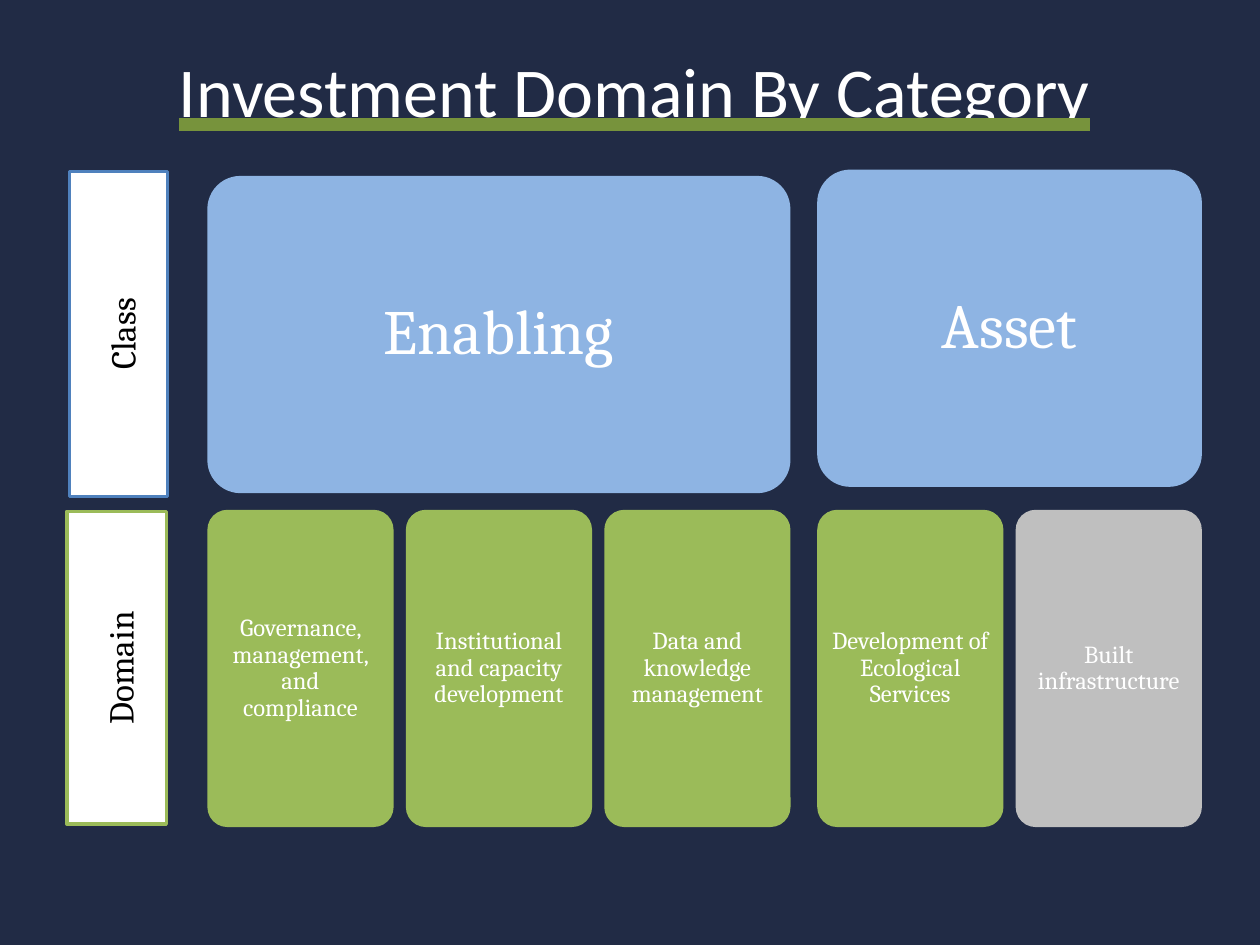
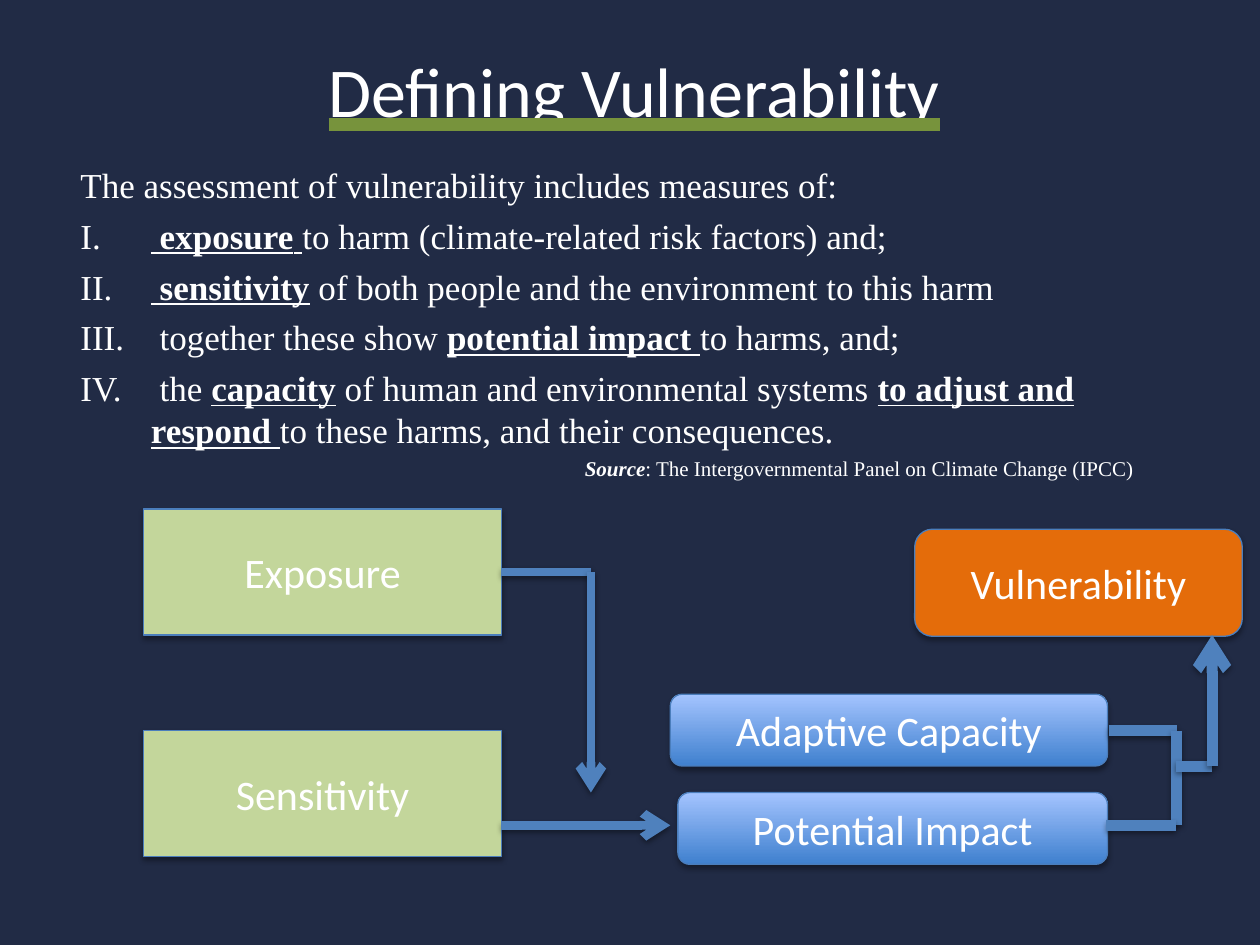
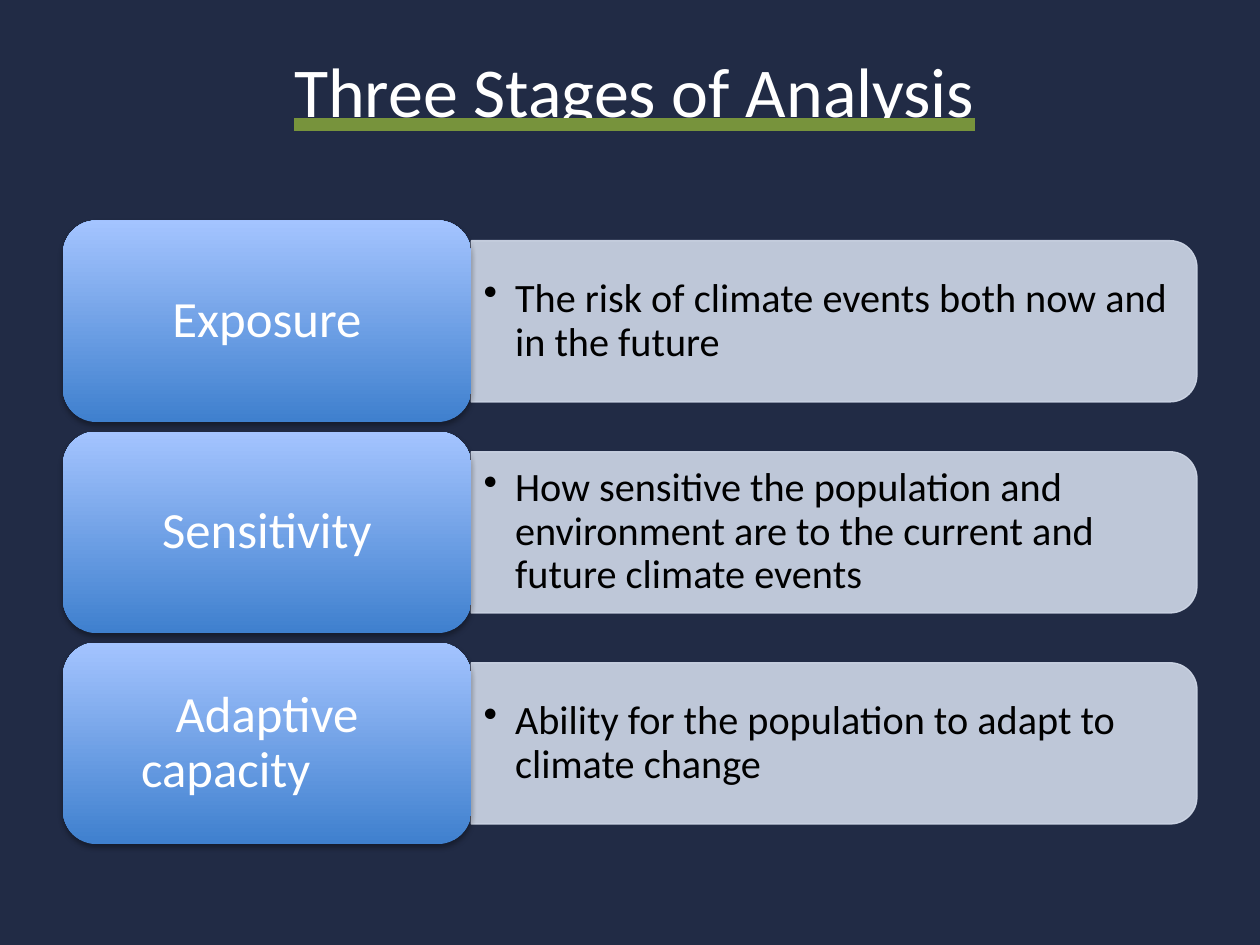
from lxml.etree import SubElement as Sub
from pptx import Presentation
from pptx.dml.color import RGBColor as RGB
from pptx.enum.shapes import MSO_CONNECTOR as Link, MSO_SHAPE as Kind
from pptx.enum.text import (MSO_ANCHOR as Anchor, MSO_AUTO_SIZE as Fit,
                            MSO_UNDERLINE as Under, PP_ALIGN as Align)
from pptx.oxml.ns import qn
from pptx.util import Inches as In, Pt

NAVY = RGB(0x21, 0x2B, 0x45)
WHITE = RGB(0xFF, 0xFF, 0xFF)
BLACK = RGB(0x00, 0x00, 0x00)
OLIVE = RGB(0x77, 0x93, 0x3C)
GREEN = RGB(0x9B, 0xBB, 0x59)
PALE = RGB(0xC3, 0xD6, 0x9B)
SKY = RGB(0x8E, 0xB4, 0xE3)
BLUE = RGB(0x4F, 0x81, 0xBD)
EDGE = RGB(0x4B, 0x7E, 0xBC)
GRAY = RGB(0xBF, 0xBF, 0xBF)
MIST = RGB(0xD0, 0xD8, 0xE8)
ORANGE = RGB(0xE4, 0x6C, 0x0A)
FADE = (RGB(0x3F, 0x80, 0xCE), RGB(0xA4, 0xC4, 0xFF))
SANS, SERIF, ROMAN = "Calibri", "Cambria", "Times New Roman"


def box(slide, kind, place, text, font, size, fill, edge=None, width=0.75,
        pad=(0.1, 0.05), lead=1.0, color=WHITE, round_by=None):
    """Add a labelled shape; a pair of colours as fill fades from bottom to top."""
    shape = slide.shapes.add_shape(kind, *map(In, place))
    shape.shadow.inherit = False
    if round_by:
        shape.adjustments[0] = round_by
    if isinstance(fill, RGB):
        shape.fill.solid()
        shape.fill.fore_color.rgb = fill
    else:
        shape.fill.gradient()
        shape.fill.gradient_angle = 90
        for stop, shade in zip(shape.fill.gradient_stops, fill):
            stop.color.rgb = shade
    if edge is None:
        shape.line.fill.background()
    else:
        shape.line.color.rgb = edge
        shape.line.width = Pt(width)
    frame = shape.text_frame
    frame.word_wrap = True
    frame.vertical_anchor = Anchor.MIDDLE
    frame.margin_left = frame.margin_right = In(pad[0])
    frame.margin_top = frame.margin_bottom = In(pad[1])
    frame.text = text
    para = frame.paragraphs[0]
    para.alignment = Align.CENTER
    para.line_spacing = lead
    para.font.name, para.font.size = font, Pt(size)
    para.font.color.rgb = color
    return shape


def drop(shape, alpha=35, dist=1.8):
    """Give the shape a soft shadow below it."""
    props = shape._element.spPr
    list_tag = qn("a:effectLst")
    effects = props.find(list_tag)
    if effects is None:
        effects = Sub(props, list_tag)
    outer = Sub(effects, qn("a:outerShdw"), blurRad=str(Pt(3.1)),
                dist=str(Pt(dist)), dir="5400000", rotWithShape="0")
    tint = Sub(outer, qn("a:srgbClr"), val="000000")
    Sub(tint, qn("a:alpha"), val=str(alpha * 1000))


deck = Presentation()
deck.slide_width, deck.slide_height = In(10), In(7.5)
ground = deck.slide_master.background.fill
ground.solid()
ground.fore_color.rgb = NAVY

slides = []
for name in ("Investment Domain By Category", "Defining Vulnerability",
             "Three Stages of Analysis"):
    slide = deck.slides.add_slide(deck.slide_layouts[5])
    title = slide.shapes.title
    title.left, title.top, title.width, title.height = map(In, (0.21, 0.21, 9.65, 1))
    title.text_frame.auto_size = Fit.NONE
    title.text_frame.vertical_anchor = Anchor.MIDDLE
    para = title.text_frame.paragraphs[0]
    para.alignment = Align.CENTER
    run = para.add_run()
    run.text = name
    run.font.size = Pt(40)
    run.font.underline = Under.HEAVY_LINE
    run.font.color.rgb = WHITE
    rule = Sub(Sub(run._r.get_or_add_rPr(), qn("a:uFill")), qn("a:solidFill"))
    Sub(rule, qn("a:srgbClr"), val=str(OLIVE))
    run.font.name = SANS
    slides.append(slide)
grid, define, stages = slides

# Investment domains
COL, STEP, TALL, LOW = 1.45, 1.575, 2.49, 4.06
starts = [1.66 + STEP * i for i in range(3)] + [6.5, 6.5 + STEP]
for name, first, span, top in (("Enabling", 0, 3, 1.41), ("Asset", 3, 2, 1.36)):
    wide = COL + STEP * (span - 1)
    box(grid, Kind.ROUNDED_RECTANGLE, (starts[first], top, wide, TALL), name,
        SERIF, 36, SKY, SKY, 2, (0.15, 0.15), 0.9, round_by=0.1)
domains = ("Governance, management, and compliance",
           "Institutional and capacity development",
           "Data and knowledge management",
           "Development of Ecological Services",
           "Built infrastructure")
for left, name in zip(starts, domains):
    fill = GRAY if name == domains[-1] else GREEN
    box(grid, Kind.ROUNDED_RECTANGLE, (left, LOW, COL, TALL), name,
        SERIF, 14, fill, fill, 2, (0.06, 0.06), 0.9, round_by=0.1)
for name, place, edge in (("Class", (0.55, 1.36, 0.78, 2.58), BLUE),
                          ("Domain", (0.53, LOW, 0.79, 2.48), GREEN)):
    label = box(grid, Kind.RECTANGLE, place, name, SERIF, 20, WHITE, edge, 2,
                lead=1.15, color=BLACK)
    label.text_frame._txBody.bodyPr.set("vert", "vert270")

# Vulnerability: each run has its text and marks (b bold, i italic, u underlined)
points = (
    [("The assessment of vulnerability includes measures of:", "")],
    [(" ", "u"), ("exposure", "bu"), (" ", "u"),
     ("to harm (climate-related risk factors) and;", "")],
    [(" ", "u"), ("sensitivity", "bu"),
     (" of both people and the environment to this harm", "")],
    [(" together these show ", ""), ("potential impact ", "bu"),
     ("to harms, and;", "")],
    [(" the ", ""), ("capacity", "bu"),
     (" of human and environmental systems ", ""),
     ("to adjust and respond", "bu"), (" ", "u"),
     ("to these harms, and their consequences.", "")],
    [("Source", "bi"),
     (": The Intergovernmental Panel on Climate Change (IPCC) ", "")],
)
frame = define.shapes.add_textbox(In(0.54), In(1.25), In(8.6), In(2.94)).text_frame
frame.word_wrap = True
last = len(points) - 1
for i, parts in enumerate(points):
    para = frame.paragraphs[0] if i == 0 else frame.add_paragraph()
    if i > 0:
        para.space_before = Pt(3 if i == last else 5)
    if 0 < i < last:
        props = para._p.get_or_add_pPr()
        props.set("marL", str(In(0.56)))
        props.set("indent", str(In(-0.56)))
        Sub(props, qn("a:buFont"), typeface="+mj-lt")
        Sub(props, qn("a:buAutoNum"), type="romanUcPeriod")
    if i == last:
        para.alignment = Align.RIGHT
    para.font.name = ROMAN
    para.font.size = Pt(12 if i == last else 20)
    para.font.color.rgb = WHITE
    for text, marks in parts:
        run = para.add_run()
        run.text = text
        if "b" in marks:
            run.font.bold = True
        if "i" in marks:
            run.font.italic = True
        if "u" in marks:
            run.font.underline = True

for name, kind, place, fill in (
        ("Exposure", Kind.RECTANGLE, (1.14, 4.04, 2.84, 1), PALE),
        ("Sensitivity", Kind.RECTANGLE, (1.14, 5.8, 2.84, 1), PALE),
        ("Vulnerability", Kind.ROUNDED_RECTANGLE, (7.26, 4.2, 2.6, 0.85), ORANGE),
        ("Adaptive Capacity", Kind.ROUNDED_RECTANGLE, (5.32, 5.51, 3.47, 0.57), FADE),
        ("Potential Impact", Kind.ROUNDED_RECTANGLE, (5.38, 6.29, 3.41, 0.57), FADE)):
    drop(box(define, kind, place, name, SANS, 24, fill, EDGE))

# Each route is a chain of points, a line width and whether it ends in an arrow
routes = (
    ([(3.98, 4.54), (4.69, 4.54), (4.69, 6.29)], 5, True),
    ([(3.98, 6.55), (5.32, 6.55)], 5, True),
    ([(8.8, 5.8), (9.34, 5.8), (9.34, 6.55)], 6.25, False),
    ([(8.78, 6.55), (9.33, 6.55)], 6.25, False),
    ([(9.33, 6.08), (9.62, 6.08), (9.62, 5.04)], 6.25, True),
)
for chain, width, arrow in routes:
    for start, end in zip(chain, chain[1:]):
        link = define.shapes.add_connector(Link.STRAIGHT, *map(In, start + end))
        link.line.color.rgb = BLUE
        link.line.width = Pt(width)
        if arrow and end == chain[-1]:
            Sub(link.line._get_or_add_ln(), qn("a:tailEnd"), type="arrow")
        drop(link, 38, 1.6)

# Stages
LEFT, SPLIT, RIGHT = 0.5, 3.74, 9.5
TOP, ROW, HIGH, BAND = 1.75, 1.675, 1.6, 1.28
wide = RIGHT - SPLIT
for i, (name, text) in enumerate((
        ("Exposure", "The risk of climate events both now and in the future"),
        ("Sensitivity", "How sensitive the population and environment are to "
                        "the current and future climate events"),
        ("Adaptive capacity\t\t",
         "Ability for the population to adapt to climate change"))):
    top = TOP + ROW * i
    mid = top + HIGH / 2
    band = stages.shapes.add_shape(
        Kind.ROUND_2_SAME_RECTANGLE, In((SPLIT + RIGHT - BAND) / 2),
        In(mid - wide / 2), In(BAND), In(wide))
    band.rotation = 90
    band.shadow.inherit = False
    band.fill.solid()
    band.fill.fore_color.rgb = band.line.color.rgb = MIST
    band.line.width = Pt(0.75)
    for tint in band._element.spPr.iter(qn("a:srgbClr")):
        Sub(tint, qn("a:alpha"), val="90000")

    note = stages.shapes.add_textbox(In(SPLIT), In(mid - 0.575), In(5.7), In(1.15))
    frame = note.text_frame
    frame.word_wrap = True
    frame.vertical_anchor = Anchor.MIDDLE
    frame.text = text
    para = frame.paragraphs[0]
    para.line_spacing = 0.9
    props = para._p.get_or_add_pPr()
    props.set("marL", str(In(0.25)))
    props.set("indent", str(In(-0.25)))
    Sub(props, qn("a:buChar"), char="•")
    para.font.name, para.font.size = SANS, Pt(23)
    para.font.color.rgb = BLACK

    drop(box(stages, Kind.ROUNDED_RECTANGLE, (LEFT, top, SPLIT - LEFT, HIGH),
             name, SANS, 29, FADE, pad=(0.12, 0.06), lead=0.9))

deck.save("out.pptx")
